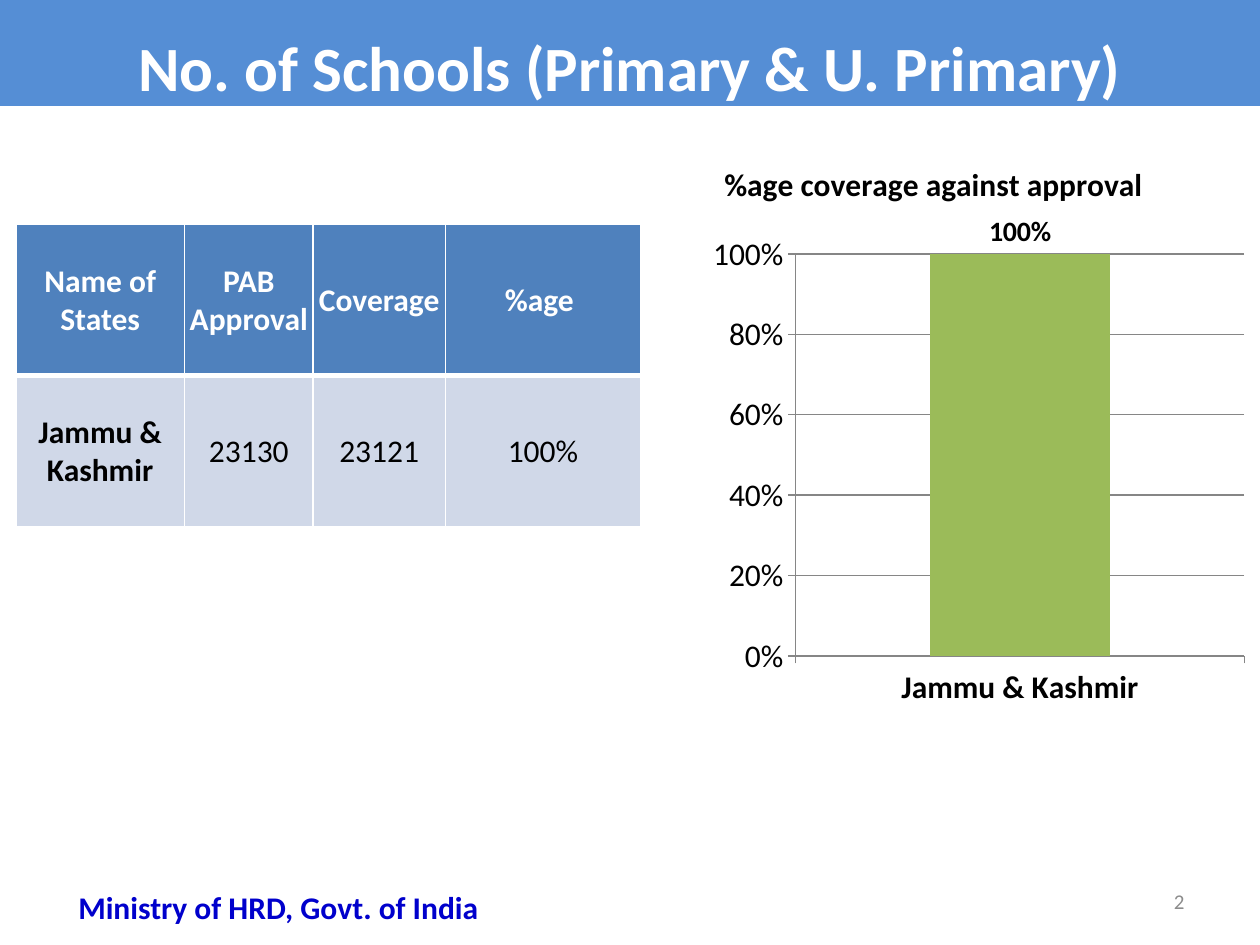
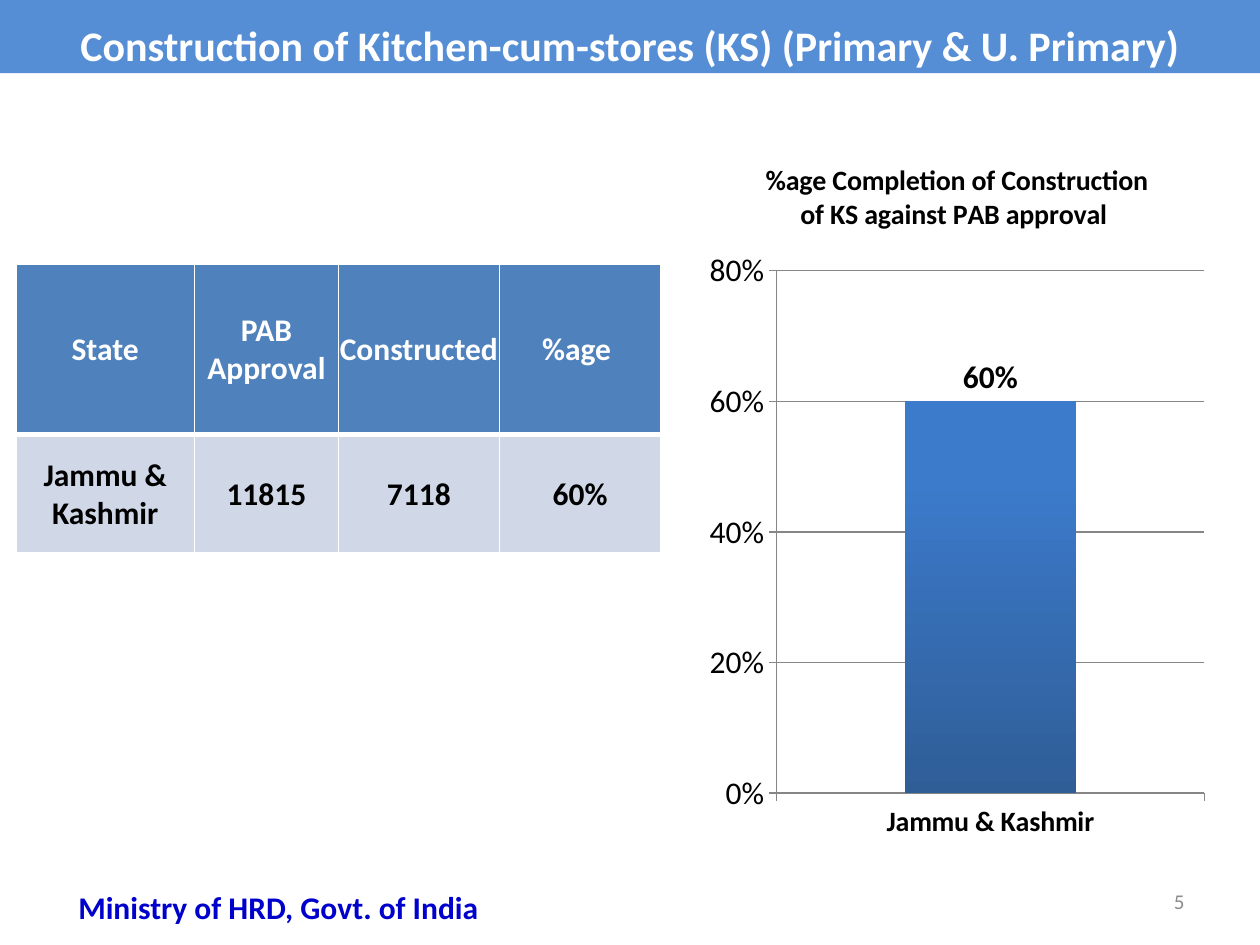
from dataclasses import dataclass
from typing import Any

from lxml.etree import SubElement
from pptx import Presentation
from pptx.chart.data import CategoryChartData
from pptx.dml.color import RGBColor
from pptx.enum.chart import XL_CHART_TYPE as ChartType
from pptx.enum.chart import XL_LABEL_POSITION as LabelPosition
from pptx.enum.chart import XL_TICK_MARK as TickMark
from pptx.enum.text import MSO_ANCHOR as Anchor
from pptx.enum.text import MSO_AUTO_SIZE as AutoSize
from pptx.enum.text import PP_ALIGN as Align
from pptx.oxml import parse_xml
from pptx.oxml.ns import nsdecls, qn
from pptx.util import Pt

BAND_BLUE = RGBColor(0x55, 0x8E, 0xD5)
HEADER_BLUE = RGBColor(0x4F, 0x81, 0xBD)
ROW_BLUE = RGBColor(0xD0, 0xD8, 0xE8)
FOOTER_BLUE = RGBColor(0x00, 0x00, 0xCC)
BAR_GREEN = RGBColor(0x9B, 0xBB, 0x59)
BAR_TOP = RGBColor(0x3C, 0x7A, 0xCB)
BAR_BOTTOM = RGBColor(0x2F, 0x5E, 0x97)
AXIS_GREY = RGBColor(0x86, 0x86, 0x86)
NUMBER_GREY = RGBColor(0x8C, 0x8C, 0x8C)
WHITE = RGBColor(0xFF, 0xFF, 0xFF)
BLACK = RGBColor(0x00, 0x00, 0x00)

TYPEFACE = "Calibri"
STATE = "Jammu & Kashmir"
FOOTER = "Ministry of HRD, Govt. of India"


@dataclass(frozen=True)
class Box:
    left: float
    top: float
    width: float
    height: float

    def lengths(self) -> tuple[Pt, Pt, Pt, Pt]:
        return Pt(self.left), Pt(self.top), Pt(self.width), Pt(self.height)


@dataclass(frozen=True)
class CoverageTable:
    box: Box
    columns: tuple[float, ...]
    rows: tuple[float, ...]
    header: tuple[str, ...]
    values: tuple[str, ...]
    bold_values: bool
    header_margin: float


@dataclass(frozen=True)
class CoverageChart:
    box: Box
    plot: tuple[float, float, float, float]
    title: str
    series: str
    value: float
    maximum: float
    bar: tuple[RGBColor, ...]
    title_size: int
    category_size: int
    label_size: int


@dataclass(frozen=True)
class Report:
    title: str
    title_size: int
    band_height: float
    number: str
    table: CoverageTable
    chart: CoverageChart


FOOTER_BOX = Box(18, 504, 282.24, 28.8)
NUMBER_BOX = Box(516.24, 500.4, 167.76, 28.8)

REPORTS = (
    Report(
        title="No. of Schools (Primary & U. Primary)",
        title_size=36,
        band_height=62.64,
        number="2",
        table=CoverageTable(
            box=Box(9, 128.16, 357.12, 173.52),
            columns=(96.48, 73.44, 75.6, 111.6),
            rows=(86.4, 86.4),
            header=("Name of States", "PAB Approval", "Coverage", "%age "),
            values=(STATE, "23130", "23121", "100%"),
            bold_values=False,
            header_margin=0.72,
        ),
        chart=CoverageChart(
            box=Box(360, 77.04, 351.36, 425.52),
            plot=(0.27, 0.16, 0.73, 0.54),
            title="%age coverage against approval ",
            series="Series 1",
            value=1,
            maximum=1,
            bar=(BAR_GREEN,),
            title_size=18,
            category_size=18,
            label_size=16,
        ),
    ),
    Report(
        title="Construction of Kitchen-cum-stores (KS) (Primary & U. Primary)",
        title_size=24,
        band_height=43.92,
        number="5",
        table=CoverageTable(
            box=Box(9, 151.2, 368.64, 164.88),
            columns=(102.24, 82.08, 92.16, 92.16),
            rows=(97.2, 67.68),
            header=("State", "PAB Approval", "Constructed", "%age "),
            values=(STATE, "11815", "7118", "60%"),
            bold_values=True,
            header_margin=0,
        ),
        chart=CoverageChart(
            box=Box(399.6, 77.04, 294.48, 408.96),
            plot=(0.15, 0.19, 0.83, 0.73),
            title="%age Completion of Construction of KS against PAB approval ",
            series="%age Completion of Construction of KS against PAB approval ",
            value=0.6,
            maximum=0.8,
            bar=(BAR_TOP, BAR_BOTTOM),
            title_size=16,
            category_size=16,
            label_size=18,
        ),
    ),
)


def apply(target: Any, formats: dict[str, Any]) -> None:
    for attribute, value in formats.items():
        setattr(target, attribute, value)


def style_font(font: Any, size: float, color: RGBColor, bold: bool) -> None:
    apply(font, {"name": TYPEFACE, "size": Pt(size), "bold": bold})
    font.color.rgb = color


def write(frame: Any, text: str, size: float, color: RGBColor, bold: bool,
          align: Align = Align.CENTER) -> None:
    paragraph = frame.paragraphs[0]
    paragraph.alignment = align
    run = paragraph.add_run()
    run.text = text
    style_font(run.font, size, color, bold)


def draw_title(slide: Any, report: Report) -> None:
    band = slide.shapes.title
    apply(band, {"left": Pt(0), "top": Pt(-2.16), "width": Pt(720),
                 "height": Pt(report.band_height)})
    band.fill.solid()
    band.fill.fore_color.rgb = BAND_BLUE
    frame = band.text_frame
    apply(frame, {"word_wrap": True, "auto_size": AutoSize.NONE,
                  "vertical_anchor": Anchor.MIDDLE})
    write(frame, report.title, report.title_size, WHITE, True)
    frame.paragraphs[0].line_spacing = 1.4


def draw_note(slide: Any, box: Box, text: str, size: float, color: RGBColor,
              bold: bool, align: Align, anchor: Anchor) -> None:
    frame = slide.shapes.add_textbox(*box.lengths()).text_frame
    apply(frame, {"word_wrap": True, "vertical_anchor": anchor})
    write(frame, text, size, color, bold, align)


def draw_borders(cell: Any, bottom: float) -> None:
    properties = cell._tc.get_or_add_tcPr()
    widths = {"lnL": 1, "lnR": 1, "lnT": 1, "lnB": bottom}
    for position, (side, width) in enumerate(widths.items()):
        properties.insert(position, parse_xml(
            f'<a:{side} {nsdecls("a")} w="{Pt(width)}"><a:solidFill>'
            f'<a:srgbClr val="{WHITE}"/></a:solidFill></a:{side}>'))


def draw_cell(cell: Any, text: str, fill: RGBColor, color: RGBColor,
              bold: bool, margin: float, bottom_border: float) -> None:
    apply(cell, {"margin_left": Pt(margin), "margin_right": Pt(margin),
                 "margin_top": Pt(margin), "margin_bottom": Pt(0),
                 "vertical_anchor": Anchor.MIDDLE})
    cell.fill.solid()
    cell.fill.fore_color.rgb = fill
    draw_borders(cell, bottom_border)
    write(cell.text_frame, text, 18, color, bold)


def draw_table(slide: Any, coverage: CoverageTable) -> None:
    table = slide.shapes.add_table(
        len(coverage.rows), len(coverage.columns), *coverage.box.lengths()).table
    for column, width in zip(table.columns, coverage.columns):
        column.width = Pt(width)
    for row, height in zip(table.rows, coverage.rows):
        row.height = Pt(height)
    for index, (heading, value) in enumerate(zip(coverage.header, coverage.values)):
        draw_cell(table.cell(0, index), heading, HEADER_BLUE, WHITE, True,
                  coverage.header_margin, 3)
        draw_cell(table.cell(1, index), value, ROW_BLUE, BLACK,
                  coverage.bold_values or index == 0, 0.72, 1)


def place_plot(chart: Any, plot: tuple[float, float, float, float]) -> None:
    area = chart._chartSpace.chart.plotArea
    for existing in area.findall(qn("c:layout")):
        area.remove(existing)
    layout = parse_xml(f'<c:layout {nsdecls("c")}/>')
    area.insert(0, layout)
    manual = SubElement(layout, qn("c:manualLayout"))
    settings = {"layoutTarget": "inner", "xMode": "edge", "yMode": "edge",
                **dict(zip("xywh", plot))}
    for tag, value in settings.items():
        SubElement(manual, qn(f"c:{tag}")).set("val", str(value))


def fill_bar(fill: Any, colors: tuple[RGBColor, ...]) -> None:
    if len(colors) == 1:
        fill.solid()
        fill.fore_color.rgb = colors[0]
        return
    fill.gradient()
    fill.gradient_angle = 270
    for stop, color, position in zip(fill.gradient_stops, colors, (0.2, 1)):
        stop.color.rgb = color
        stop.position = position


def draw_chart(slide: Any, coverage: CoverageChart) -> None:
    data = CategoryChartData(number_format="0%")
    data.categories = [STATE]
    data.add_series(coverage.series, [coverage.value])
    chart = slide.shapes.add_chart(
        ChartType.COLUMN_CLUSTERED, *coverage.box.lengths(), data).chart
    apply(chart, {"has_legend": False, "has_title": True})
    style_font(chart.font, 18, BLACK, False)
    write(chart.chart_title.text_frame, coverage.title, coverage.title_size, BLACK, True)
    chart.chart_title.include_in_layout = False

    states, shares = chart.category_axis, chart.value_axis
    apply(shares, {"minimum_scale": 0, "maximum_scale": coverage.maximum,
                   "major_unit": 0.2, "has_major_gridlines": True})
    apply(shares.tick_labels, {"number_format": "0%", "number_format_is_linked": False})
    for axis, size, bold in ((states, coverage.category_size, True), (shares, 18, False)):
        apply(axis, {"major_tick_mark": TickMark.OUTSIDE, "minor_tick_mark": TickMark.NONE})
        axis.format.line.color.rgb = AXIS_GREY
        style_font(axis.tick_labels.font, size, BLACK, bold)
    shares.major_gridlines.format.line.color.rgb = AXIS_GREY

    columns = chart.plots[0]
    apply(columns, {"gap_width": 150, "vary_by_categories": False, "has_data_labels": True})
    fill_bar(columns.series[0].format.fill, coverage.bar)
    labels = columns.data_labels
    apply(labels, {"show_value": True, "number_format": "0%",
                   "number_format_is_linked": False,
                   "position": LabelPosition.OUTSIDE_END})
    style_font(labels.font, coverage.label_size, BLACK, True)
    place_plot(chart, coverage.plot)


def main() -> None:
    deck = Presentation()
    apply(deck, {"slide_width": Pt(720), "slide_height": Pt(540)})
    title_only = deck.slide_layouts[5]
    for report in REPORTS:
        slide = deck.slides.add_slide(title_only)
        draw_title(slide, report)
        draw_chart(slide, report.chart)
        draw_table(slide, report.table)
        draw_note(slide, NUMBER_BOX, report.number, 12, NUMBER_GREY, False,
                  Align.RIGHT, Anchor.MIDDLE)
        draw_note(slide, FOOTER_BOX, FOOTER, 18, FOOTER_BLUE, True,
                  Align.CENTER, Anchor.TOP)
    deck.save("out.pptx")


if __name__ == "__main__":
    main()
